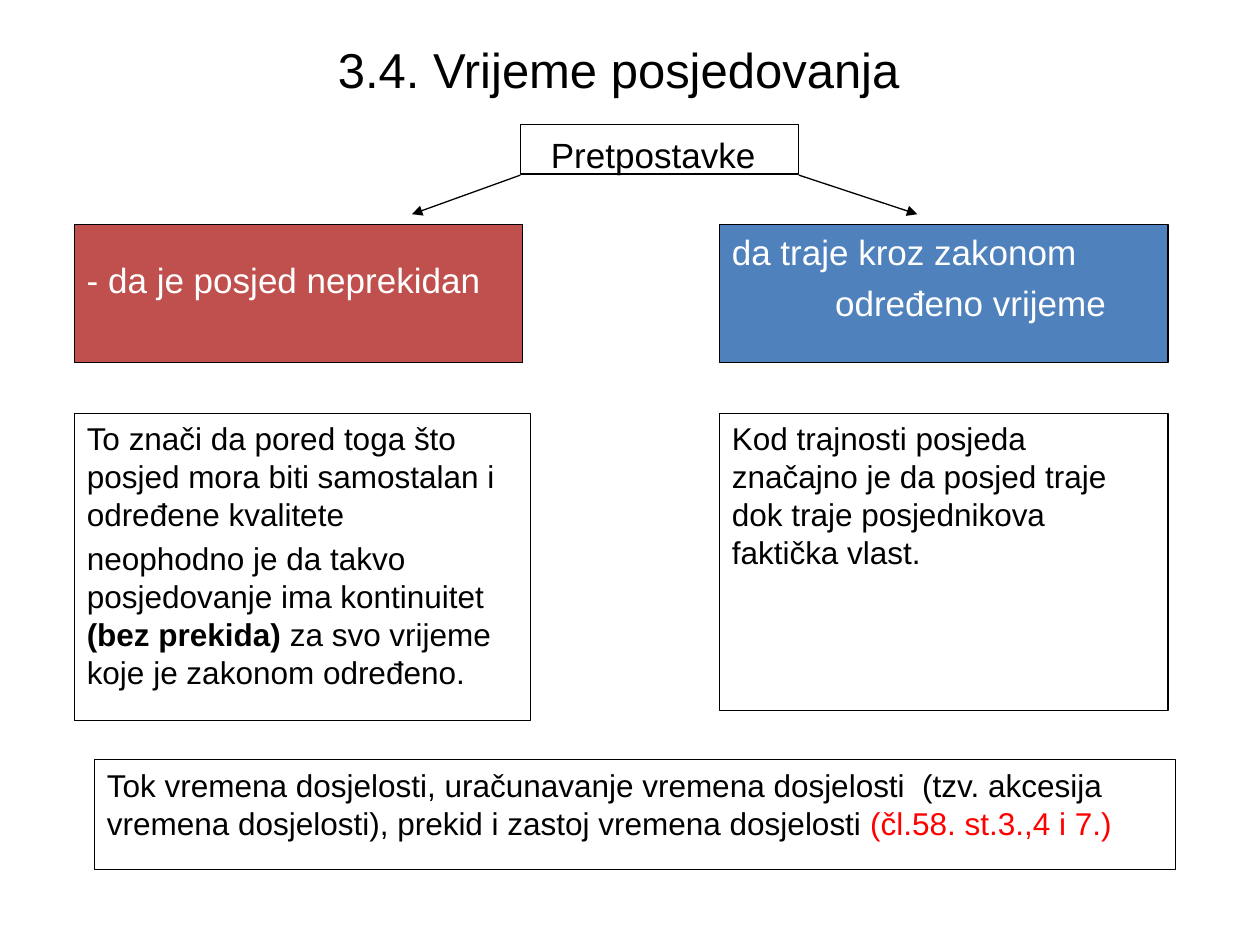
from lxml import etree
from pptx import Presentation
from pptx.dml.color import RGBColor
from pptx.enum import shapes, text
from pptx.oxml.ns import qn
from pptx.util import Inches, Pt

BLACK = RGBColor(0x00, 0x00, 0x00)
WHITE = RGBColor(0xFF, 0xFF, 0xFF)
RED = RGBColor(0xFF, 0x00, 0x00)
BRICK = RGBColor(0xC0, 0x50, 0x4D)
BLUE = RGBColor(0x4F, 0x81, 0xBD)
FONT = "Arial"
LEFT_COLUMN, RIGHT_COLUMN = 0.59, 5.71
COLUMN_WIDTH = 3.56
HEADING_TOP, DETAIL_TOP = 1.78, 3.28
CENTER = text.PP_ALIGN.CENTER
MIDDLE = text.MSO_ANCHOR.MIDDLE


def write_text(shape, paragraphs, size, color=BLACK, align=text.PP_ALIGN.LEFT,
               anchor=text.MSO_ANCHOR.TOP, top_inset=0.05, right_inset=0.1,
               space=3.6):
    frame = shape.text_frame
    frame.word_wrap = True
    frame.vertical_anchor = anchor
    frame.margin_top = Inches(top_inset)
    frame.margin_right = Inches(right_inset)
    for index, runs in enumerate(paragraphs):
        paragraph = frame.add_paragraph() if index else frame.paragraphs[0]
        paragraph.alignment = align
        if index:
            paragraph.space_before = Pt(space)
        for content, bold, run_color in runs:
            run = paragraph.add_run()
            run.text = content
            run.font.name = FONT
            run.font.size = Pt(size)
            run.font.bold = bold
            run.font.color.rgb = run_color or color
    return frame


def plain(content):
    return [(content, False, None)]


def add_title(slide, content):
    box = slide.shapes.add_textbox(Inches(0.51), Inches(0.28), Inches(9), Inches(0.54))
    write_text(box, [plain(content)], 28, align=CENTER, anchor=MIDDLE, right_inset=0.3)


def add_box(slide, left, top, width, height, paragraphs, size, fill=WHITE, **options):
    shape = slide.shapes.add_shape(
        shapes.MSO_SHAPE.RECTANGLE, Inches(left), Inches(top), Inches(width), Inches(height))
    shape.shadow.inherit = False
    shape.fill.solid()
    shape.fill.fore_color.rgb = fill
    shape.line.color.rgb = BLACK
    shape.line.width = Pt(0.75)
    return write_text(shape, paragraphs, size, **options)


def add_arrow(slide, start_x, end_x):
    connector = slide.shapes.add_connector(
        shapes.MSO_CONNECTOR.STRAIGHT,
        Inches(start_x), Inches(1.39), Inches(end_x), Inches(1.7))
    connector.line.color.rgb = BLACK
    connector.line.width = Pt(0.75)
    line = connector.line._get_or_add_ln()
    etree.SubElement(line, qn("a:tailEnd"), type="triangle")
    etree.SubElement(connector._element.spPr, qn("a:effectLst"))


def add_headings(slide):
    add_box(slide, 4.13, 0.99, 2.21, 0.39, [plain("Pretpostavke")], 20,
            align=CENTER, anchor=MIDDLE, top_inset=0.13, right_inset=0.2)
    add_arrow(slide, 4.13, 3.27)
    add_arrow(slide, 6.34, 7.28)
    add_box(slide, LEFT_COLUMN, HEADING_TOP, COLUMN_WIDTH, 1.1,
            [plain("- da je posjed neprekidan")], 20, BRICK, color=WHITE, top_inset=0.27)
    frame = add_box(slide, RIGHT_COLUMN, HEADING_TOP, COLUMN_WIDTH, 1.1,
                    [plain("da traje kroz zakonom"), plain("određeno vrijeme")],
                    20, BLUE, color=WHITE, space=5)
    properties = frame.paragraphs[1]._p.get_or_add_pPr()
    properties.set("marL", str(Inches(0.82)))


def add_details(slide):
    add_box(slide, LEFT_COLUMN, DETAIL_TOP, 3.62, 2.44, [
        plain("To znači da pored toga što posjed mora biti samostalan i određene kvalitete"),
        [("neophodno je da takvo posjedovanje ima kontinuitet ", False, None),
         ("(bez prekida) ", True, None),
         ("za svo vrijeme koje je zakonom određeno.", False, None)],
    ], 18)
    add_box(slide, RIGHT_COLUMN, DETAIL_TOP, COLUMN_WIDTH, 2.36, [
        plain("Kod trajnosti posjeda značajno je da posjed traje dok traje "
              "posjednikova faktička vlast."),
    ], 18)
    add_box(slide, 0.75, 6.03, 8.58, 0.87, [
        [("Tok vremena dosjelosti, uračunavanje vremena dosjelosti  (tzv. akcesija "
          "vremena dosjelosti), prekid i zastoj vremena dosjelosti ", False, None),
         ("(čl.58. st.3.,4 i 7.)", False, RED)],
    ], 18)


def main():
    presentation = Presentation()
    presentation.slide_width = Inches(10)
    presentation.slide_height = Inches(7.5)
    slide = presentation.slides.add_slide(presentation.slide_layouts[6])
    add_title(slide, "3.4. Vrijeme posjedovanja")
    add_headings(slide)
    add_details(slide)
    presentation.save("out.pptx")


if __name__ == "__main__":
    main()
